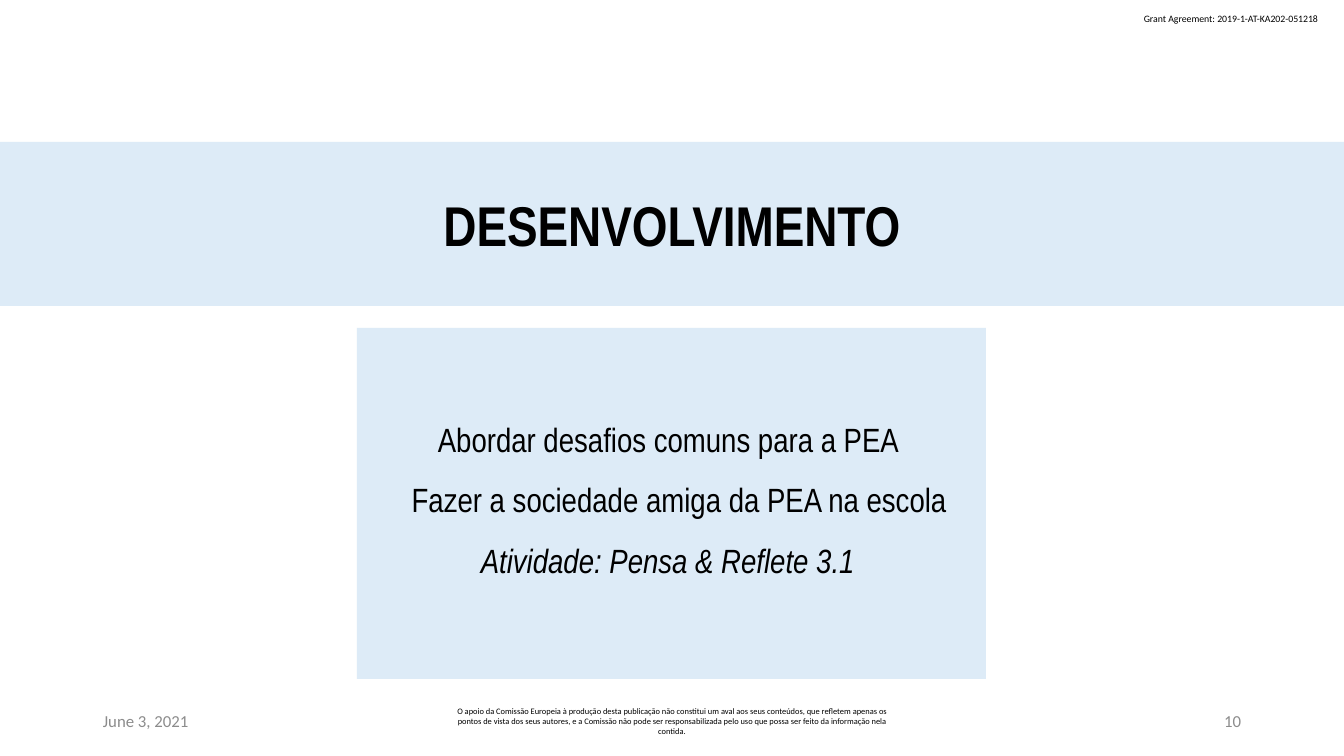
from pptx import Presentation
from pptx.dml.color import RGBColor
from pptx.enum.shapes import MSO_SHAPE
from pptx.enum.text import MSO_ANCHOR, PP_ALIGN
from pptx.util import Pt

W, H = 1344, 756
PX = 12192000 / W
COLORS = {"panel": "DDEBF7", "text": "000000", "muted": "8C8C8C"}
LEFT, CENTER, RIGHT = PP_ALIGN.LEFT, PP_ALIGN.CENTER, PP_ALIGN.RIGHT


def px(n):
    return round(n * PX)


def write(p, text, color, **font):
    r = p.add_run()
    r.text = text
    r.font.color.rgb = RGBColor.from_string(COLORS[color])
    for name, value in font.items():
        setattr(r.font, name, value)


prs = Presentation()
prs.slide_width, prs.slide_height = px(W), px(H)
s = prs.slides.add_slide(prs.slide_layouts[6])

# Grant line and footer
DISCLAIMER = (
    "O apoio da Comissão Europeia à produção desta publicação não constitui um aval "
    "aos seus conteúdos, que refletem apenas os pontos de vista dos seus autores, e a "
    "Comissão não pode ser responsabilizada pelo uso que possa ser feito da informação "
    "nela contida."
)
small_texts = [
    ((1134, 8, 199, 22), "Grant Agreement: 2019-1-AT-KA202-051218", 7, "text", LEFT, False),
    ((93, 701, 302, 40), "June 3, 2021", 12, "muted", LEFT, True),
    ((445, 701, 454, 40), DISCLAIMER, 6, "text", CENTER, True),
    ((949, 701, 302, 40), "10", 12, "muted", RIGHT, True),
]
for box, text, size, color, align, wrap in small_texts:
    tf = s.shapes.add_textbox(*map(px, box)).text_frame
    tf.word_wrap = wrap
    tf.vertical_anchor = MSO_ANCHOR.MIDDLE if wrap else MSO_ANCHOR.TOP
    p = tf.paragraphs[0]
    p.alignment = align
    write(p, text, color, size=Pt(size), name="Calibri")

# Title band and topic panel: (text, left indent, font settings) per line
title = [("DESENVOLVIMENTO", 0, {"size": Pt(40), "bold": True})]
topics = [
    ("Abordar desafios comuns para a PEA ", 0, {"size": Pt(24)}),
    ("Fazer a sociedade amiga da PEA na escola", 15, {"size": Pt(24)}),
    ("Atividade: Pensa & Reflete 3.1 ", 0, {"size": Pt(24), "italic": True}),
]
panels = [
    ((0, 142, W, 164), title, 1.0, 7),
    ((357, 328, 629, 351), topics, 1.5, 36),
]
for box, lines, spacing, bottom in panels:
    sp = s.shapes.add_shape(MSO_SHAPE.RECTANGLE, *map(px, box))
    sp.shadow.inherit = False
    sp.fill.solid()
    sp.fill.fore_color.rgb = RGBColor.from_string(COLORS["panel"])
    sp.line.fill.background()
    tf = sp.text_frame
    tf.word_wrap = True
    tf.vertical_anchor = MSO_ANCHOR.MIDDLE
    tf.margin_left = tf.margin_right = px(13)
    tf.margin_top, tf.margin_bottom = px(7), px(bottom)
    for i, (text, indent, font) in enumerate(lines):
        p = tf.add_paragraph() if i else tf.paragraphs[0]
        p.alignment = CENTER
        p.line_spacing = spacing
        if indent:
            p._p.get_or_add_pPr().set("marL", str(px(indent)))
        write(p, text, "text", name="Arial Narrow", **font)

prs.save("out.pptx")
